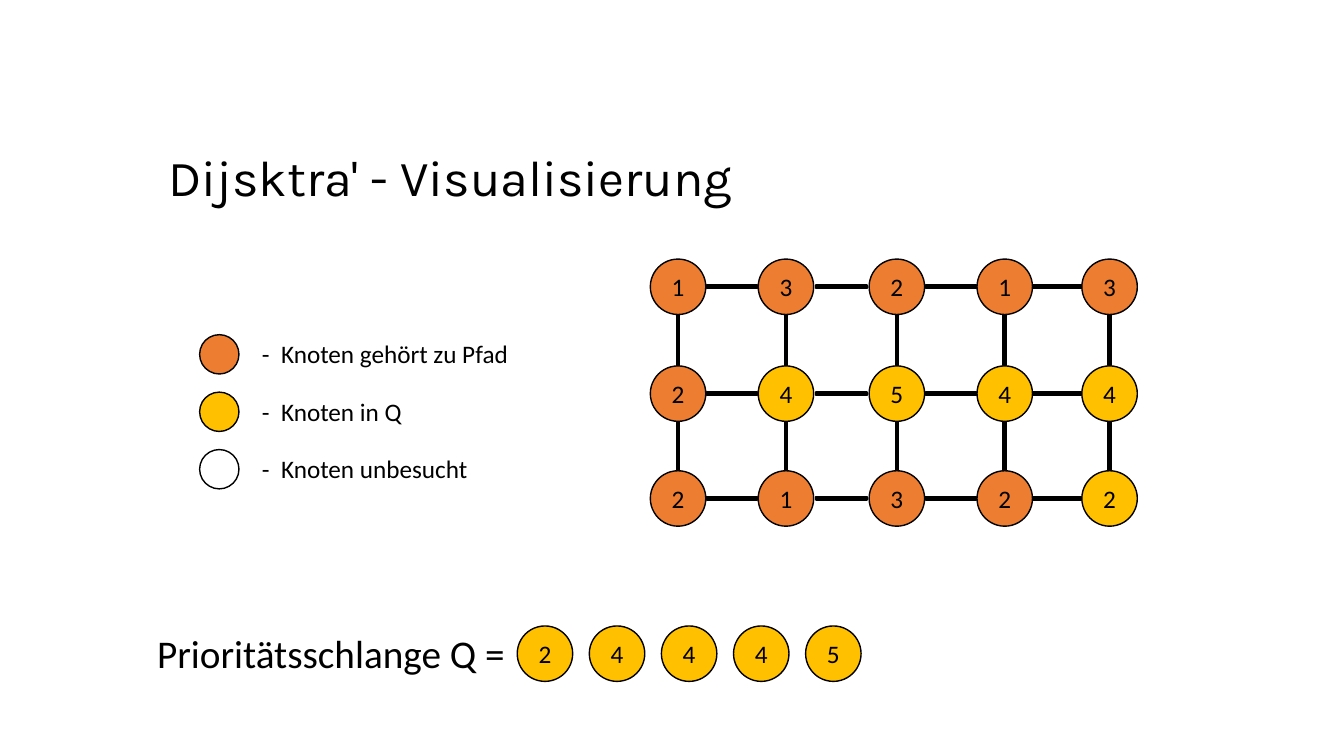
from dataclasses import dataclass

import lxml.etree
import pptx
import pptx.dml.color
import pptx.enum.shapes
import pptx.enum.text
import pptx.oxml.ns
import pptx.util

Inches = pptx.util.Inches
Shape = pptx.enum.shapes.MSO_SHAPE


@dataclass(frozen=True)
class Theme:
    path_node: str = "ED7D31"
    queued_node: str = "FFC000"
    unvisited_node: str = "FFFFFF"
    ink: str = "000000"
    title_font: str = "Karla"
    body_font: str = "Calibri"
    title_size: int = 36
    queue_size: int = 28
    body_size: int = 18
    outline: int = 1


THEME = Theme()
NODE_SIZE = 0.55
EDGE_LENGTH, EDGE_HEIGHT = 0.69, 0.14


def rgb(value):
    return pptx.dml.color.RGBColor.from_string(value)


def write(paragraph, text, size, font=THEME.body_font):
    run = paragraph.add_run()
    run.text = text
    run.font.size = pptx.util.Pt(size)
    run.font.name = font
    run.font.color.rgb = rgb(THEME.ink)


def add_label(slide, box, text, size, font=THEME.body_font):
    label = slide.shapes.add_textbox(*map(Inches, box))
    label.text_frame.word_wrap = True
    paragraph = label.text_frame.paragraphs[0]
    write(paragraph, text, size, font)
    return paragraph


def add_outlined(slide, preset, box, color):
    figure = slide.shapes.add_shape(preset, *map(Inches, box))
    figure.shadow.inherit = False
    figure.fill.solid()
    figure.fill.fore_color.rgb = rgb(color)
    figure.line.color.rgb = rgb(THEME.ink)
    figure.line.width = pptx.util.Pt(THEME.outline)
    return figure


def add_node(slide, left, top, cost, color):
    node = add_outlined(slide, Shape.OVAL, (left, top, NODE_SIZE, NODE_SIZE), color)
    node.text_frame.vertical_anchor = pptx.enum.text.MSO_ANCHOR.MIDDLE
    paragraph = node.text_frame.paragraphs[0]
    paragraph.alignment = pptx.enum.text.PP_ALIGN.CENTER
    write(paragraph, str(cost), THEME.body_size)


def add_edge(slide, center_x, center_y, rotation=0):
    box = (center_x - EDGE_LENGTH / 2, center_y - EDGE_HEIGHT / 2, EDGE_LENGTH, EDGE_HEIGHT)
    edge = add_outlined(slide, Shape.MATH_MINUS, box, THEME.ink)
    edge.adjustments[0] = 0.235
    edge.rotation = rotation


def add_graph(slide, left, top):
    columns = [left + offset for offset in (0, 1.07, 2.17, 3.24, 4.28)]
    rows = [top + offset for offset in (0, 1.06, 2.1)]
    costs = [[1, 3, 2, 1, 3], [2, 4, 5, 4, 4], [2, 1, 3, 2, 2]]
    queued = {(1, 1), (1, 2), (1, 3), (1, 4), (2, 4)}
    radius = NODE_SIZE / 2
    for y in rows:
        for x, next_x in zip(columns, columns[1:]):
            add_edge(slide, (x + next_x) / 2 + radius, y + radius)
    for x in columns:
        for y, next_y in zip(rows, rows[1:]):
            add_edge(slide, x + radius, (y + next_y) / 2 + radius, 90)
    for row, y in enumerate(rows):
        for column, x in enumerate(columns):
            color = THEME.queued_node if (row, column) in queued else THEME.path_node
            add_node(slide, x, y, costs[row][column], color)


def add_legend(slide, left, top):
    entries = [
        ("Knoten gehört zu Pfad", THEME.path_node),
        ("Knoten in Q", THEME.queued_node),
        ("Knoten unbesucht", THEME.unvisited_node),
    ]
    for index, (meaning, color) in enumerate(entries):
        y = top + index * 0.57
        add_outlined(slide, Shape.OVAL, (left, y, 0.39, 0.39), color)
        paragraph = add_label(
            slide, (left + 0.52, y - 0.01, 3, 0.4), f"-\t{meaning}", THEME.body_size
        )
        properties = paragraph._p.get_or_add_pPr()
        tab_list = lxml.etree.SubElement(properties, pptx.oxml.ns.qn("a:tabLst"))
        tab = lxml.etree.SubElement(tab_list, pptx.oxml.ns.qn("a:tab"))
        tab.set("pos", str(Inches(0.19)))
        tab.set("algn", "l")


def add_queue(slide, left, top):
    add_label(slide, (left, top, 3.69, 0.57), "Prioritätsschlange Q =", THEME.queue_size)
    costs = [2, 4, 4, 4, 5]
    pitch = 2.86 / (len(costs) - 1)
    for index, cost in enumerate(costs):
        add_node(slide, left + 3.67 + index * pitch, top + 0.02, cost, THEME.queued_node)


def add_title(slide, left, top):
    add_label(
        slide,
        (left, top, 9.66, 0.71),
        "Dijsktra' - Visualisierung",
        THEME.title_size,
        THEME.title_font,
    )


def main():
    presentation = pptx.Presentation()
    presentation.slide_width = Inches(13.33)
    presentation.slide_height = Inches(7.5)
    slide = presentation.slides.add_slide(presentation.slide_layouts[6])
    add_title(slide, 1.57, 1.4)
    add_graph(slide, 6.45, 2.57)
    add_legend(slide, 1.98, 3.32)
    add_queue(slide, 1.46, 6.19)
    presentation.save("out.pptx")


if __name__ == "__main__":
    main()
